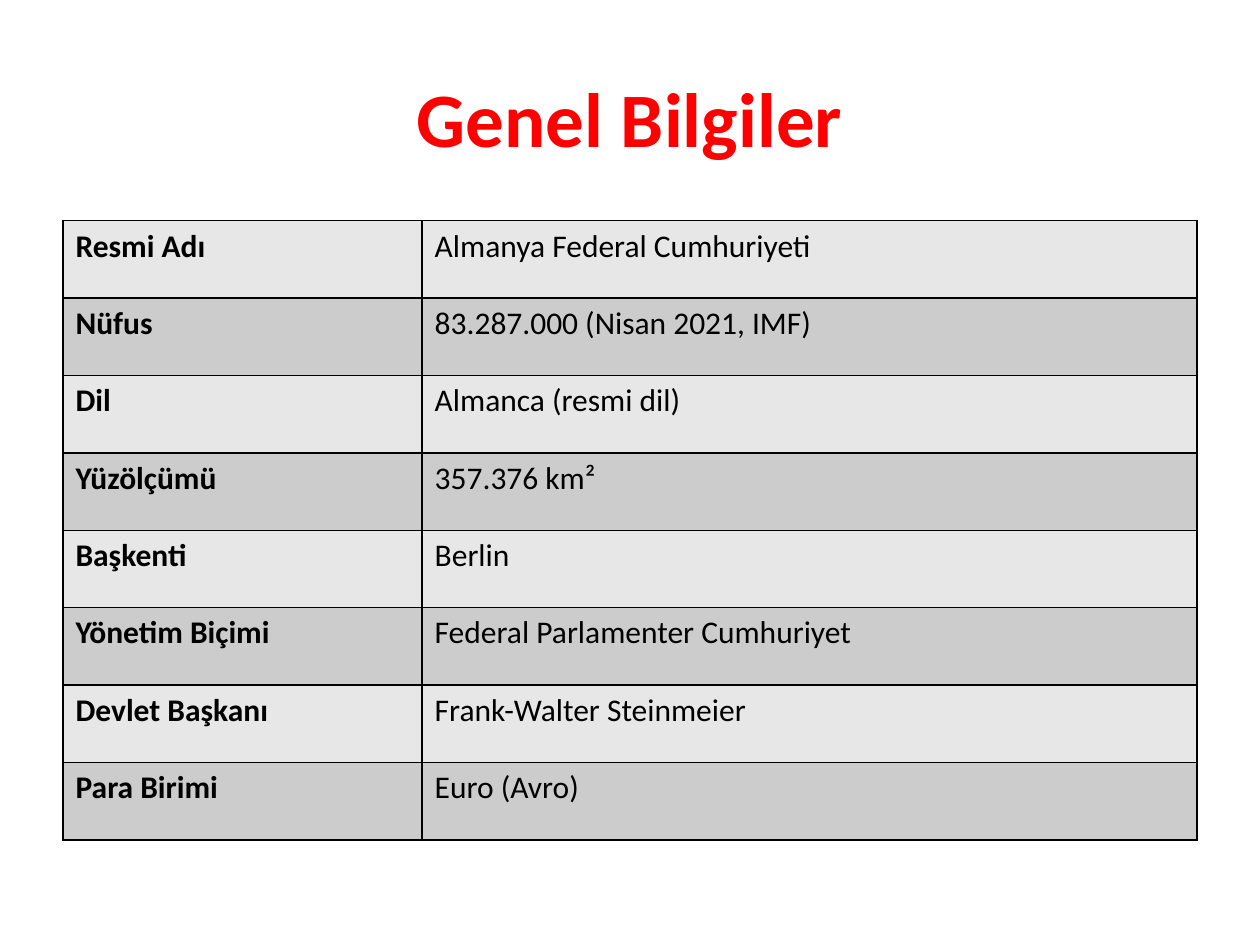
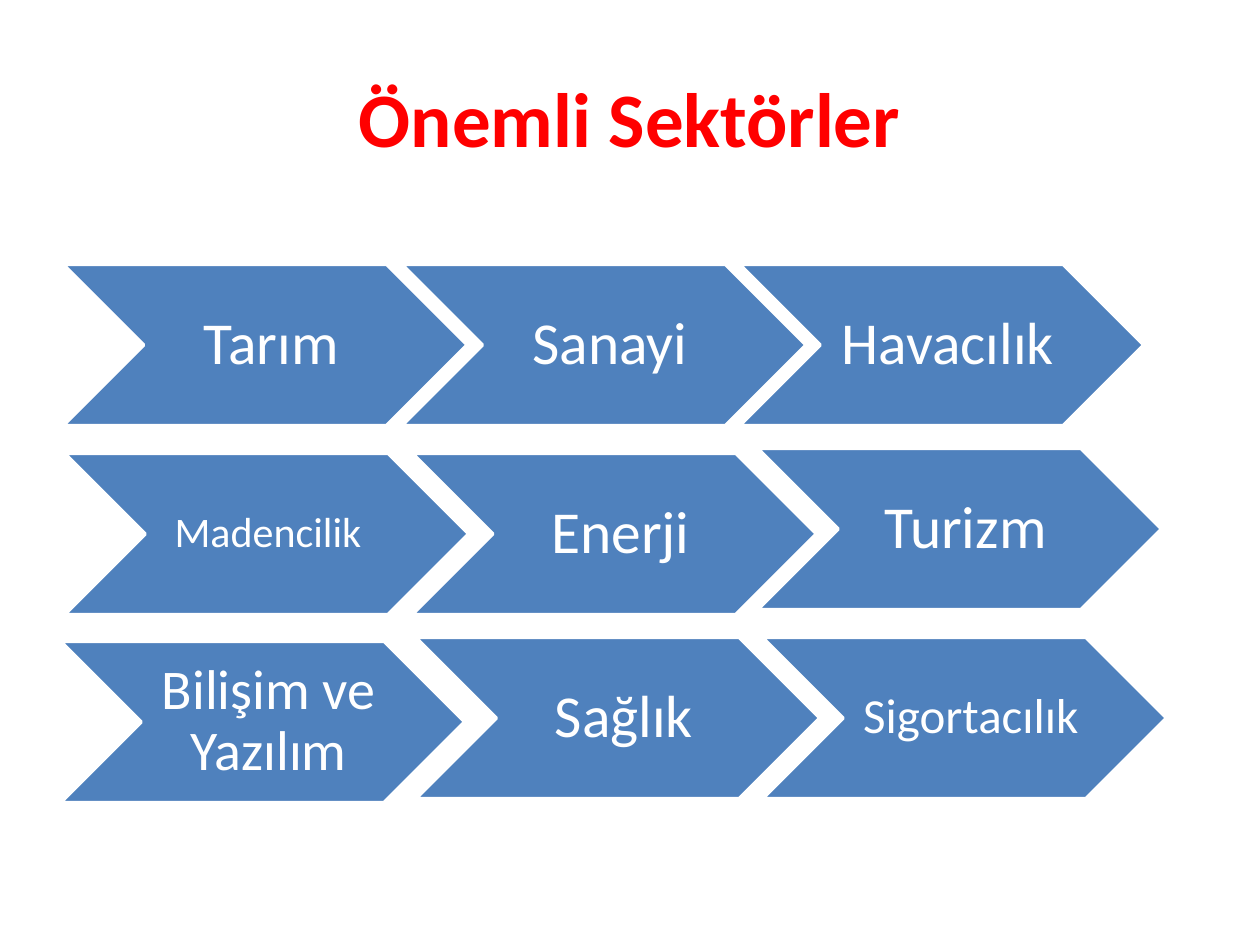
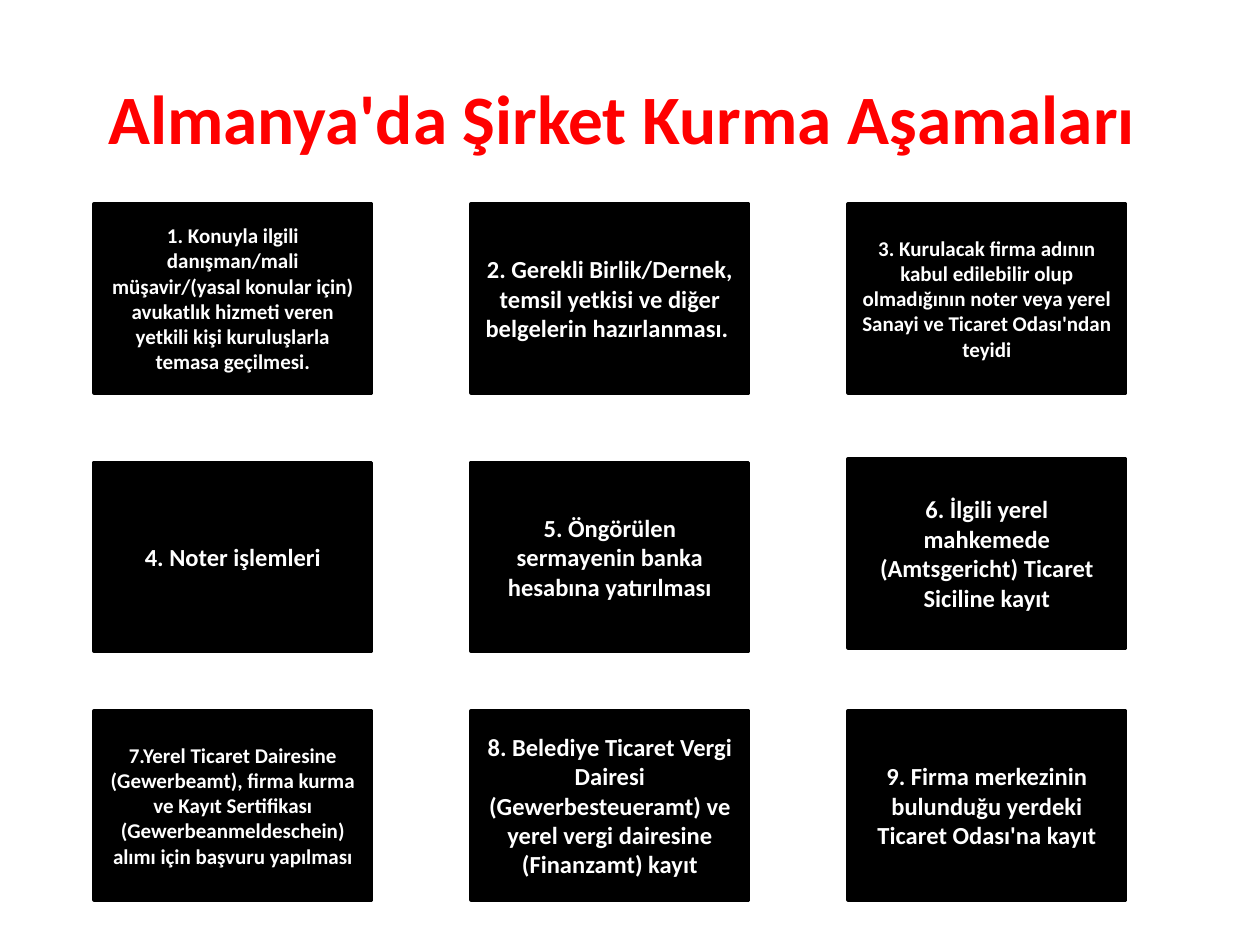
import pptx
import pptx.util
import pptx.dml.color
import pptx.enum.shapes
import pptx.enum.text
import lxml.etree

Cm, Pt = pptx.util.Cm, pptx.util.Pt
Kind = pptx.enum.shapes.MSO_SHAPE
Align = pptx.enum.text.PP_ALIGN
Anchor = pptx.enum.text.MSO_ANCHOR

FONT = "Calibri"
INK = {
    "title": "FF0000",
    "arrow": "4F81BD",
    "white": "FFFFFF",
    "black": "000000",
    "light": "E7E7E7",
    "dark": "CCCCCC",
}
NS = "http://schemas.openxmlformats.org/drawingml/2006/main"


def rgb(name):
    return pptx.dml.color.RGBColor.from_string(INK[name])


def write(frame, text, size, color, bold=False, align=Align.CENTER):
    frame.word_wrap = True
    para = frame.paragraphs[0]
    para.alignment = align
    run = para.add_run()
    run.text = text
    run.font.name = FONT
    run.font.size = Pt(size)
    run.font.bold = bold
    run.font.color.rgb = rgb(color)
    return para


deck = pptx.Presentation()
deck.slide_width, deck.slide_height = Cm(25.4), Cm(19.05)

# Slides with their shared title style
slides = []
for text, size in [
    ("Genel Bilgiler", 44),
    ("Önemli Sektörler", 44),
    ("Almanya'da Şirket Kurma Aşamaları ", 39.6),
]:
    slide = deck.slides.add_slide(deck.slide_layouts[6])
    title = slide.shapes.add_textbox(Cm(1.27), Cm(0.76), Cm(22.86), Cm(3.18))
    title.text_frame.vertical_anchor = Anchor.MIDDLE
    write(title.text_frame, text, size, "title", True)
    slides.append(slide)
facts, fields, steps = slides

# Country facts table
rows = [
    ("Resmi Adı", "Almanya Federal Cumhuriyeti"),
    ("Nüfus", "83.287.000 (Nisan 2021, IMF)"),
    ("Dil", "Almanca (resmi dil)"),
    ("Yüzölçümü", "357.376 km²"),
    ("Başkenti", "Berlin"),
    ("Yönetim Biçimi", "Federal Parlamenter Cumhuriyet"),
    ("Devlet Başkanı", "Frank-Walter Steinmeier"),
    ("Para Birimi", "Euro (Avro)"),
]
high = 1.56
table = facts.shapes.add_table(
    len(rows), 2, Cm(1.27), Cm(4.45), Cm(22.86), Cm(high * len(rows))
).table
table.first_row = table.horz_banding = False
table.columns[0].width, table.columns[1].width = Cm(7.24), Cm(15.62)
for r, row in enumerate(rows):
    table.rows[r].height = Cm(high)
    for c, text in enumerate(row):
        cell = table.cell(r, c)
        props = cell._tc.get_or_add_tcPr()
        for side in ("lnL", "lnR", "lnT", "lnB"):
            edge = lxml.etree.SubElement(props, f"{{{NS}}}{side}", w=str(Pt(1)))
            fill = lxml.etree.SubElement(edge, f"{{{NS}}}solidFill")
            lxml.etree.SubElement(fill, f"{{{NS}}}srgbClr", val=INK["black"])
        cell.fill.solid()
        cell.fill.fore_color.rgb = rgb("dark" if r % 2 else "light")
        write(cell.text_frame, text, 18, "black", c == 0, Align.LEFT)

# Sector chevrons: left, top, text, size
sectors = [
    (1.27, 5.33, "Tarım", 34),
    (8.1, 5.33, "Sanayi", 34),
    (14.91, 5.33, "Havacılık", 34),
    (1.3, 9.14, "Madencilik ", 24),
    (8.31, 9.14, "Enerji", 34),
    (15.27, 9.04, "Turizm", 34),
    (1.22, 12.93, "Bilişim ve Yazılım", 32),
    (8.38, 12.85, "Sağlık", 34),
    (15.37, 12.85, "Sigortacılık", 28),
]
for left, top, text, size in sectors:
    arrow = fields.shapes.add_shape(
        Kind.CHEVRON, Cm(left), Cm(top), Cm(8.15), Cm(3.25)
    )
    arrow.shadow.inherit = False
    arrow.fill.solid()
    arrow.fill.fore_color.rgb = rgb("arrow")
    arrow.line.color.rgb = rgb("white")
    arrow.line.width = Pt(2)
    frame = arrow.text_frame
    frame.vertical_anchor = Anchor.MIDDLE
    frame.margin_left = Cm(0.38)
    frame.margin_right = frame.margin_top = frame.margin_bottom = Cm(0.13)
    write(frame, text, size, "white").line_spacing = 0.9

# Founding steps on a three by three grid
boxes = [
    ("1. Konuyla ilgili danışman/mali müşavir/(yasal konular için) avukatlık "
     "hizmeti veren yetkili kişi kuruluşlarla temasa geçilmesi.", 12),
    ("2. Gerekli Birlik/Dernek, temsil yetkisi ve diğer belgelerin "
     "hazırlanması. ", 14),
    ("3. Kurulacak firma adının kabul edilebilir olup olmadığının noter veya "
     "yerel Sanayi ve Ticaret Odası'ndan teyidi", 12),
    ("4. Noter işlemleri", 14),
    ("5. Öngörülen sermayenin banka hesabına yatırılması", 14),
    ("6. İlgili yerel mahkemede (Amtsgericht) Ticaret Siciline kayıt", 14),
    ("7.Yerel Ticaret Dairesine (Gewerbeamt), firma kurma ve Kayıt Sertifikası "
     "(Gewerbeanmeldeschein) alımı için başvuru yapılması", 12),
    ("8. Belediye Ticaret Vergi Dairesi (Gewerbesteueramt) ve yerel vergi "
     "dairesine (Finanzamt) kayıt", 14),
    ("9. Firma merkezinin bulunduğu yerdeki Ticaret Odası'na kayıt", 14),
]
tops = [4.11, 9.32, 14.33]
for i, (text, size) in enumerate(boxes):
    r, c = divmod(i, 3)
    top = 9.25 if i == 5 else tops[r]
    box = steps.shapes.add_shape(
        Kind.RECTANGLE, Cm(1.9 + 7.6 * c), Cm(top), Cm(5.59), Cm(3.81)
    )
    box.shadow.inherit = False
    box.fill.solid()
    box.fill.fore_color.rgb = rgb("black")
    box.line.color.rgb = rgb("black")
    box.line.width = Pt(2)
    box.text_frame.vertical_anchor = Anchor.MIDDLE
    write(box.text_frame, text, size, "white", True)

deck.save("out.pptx")
